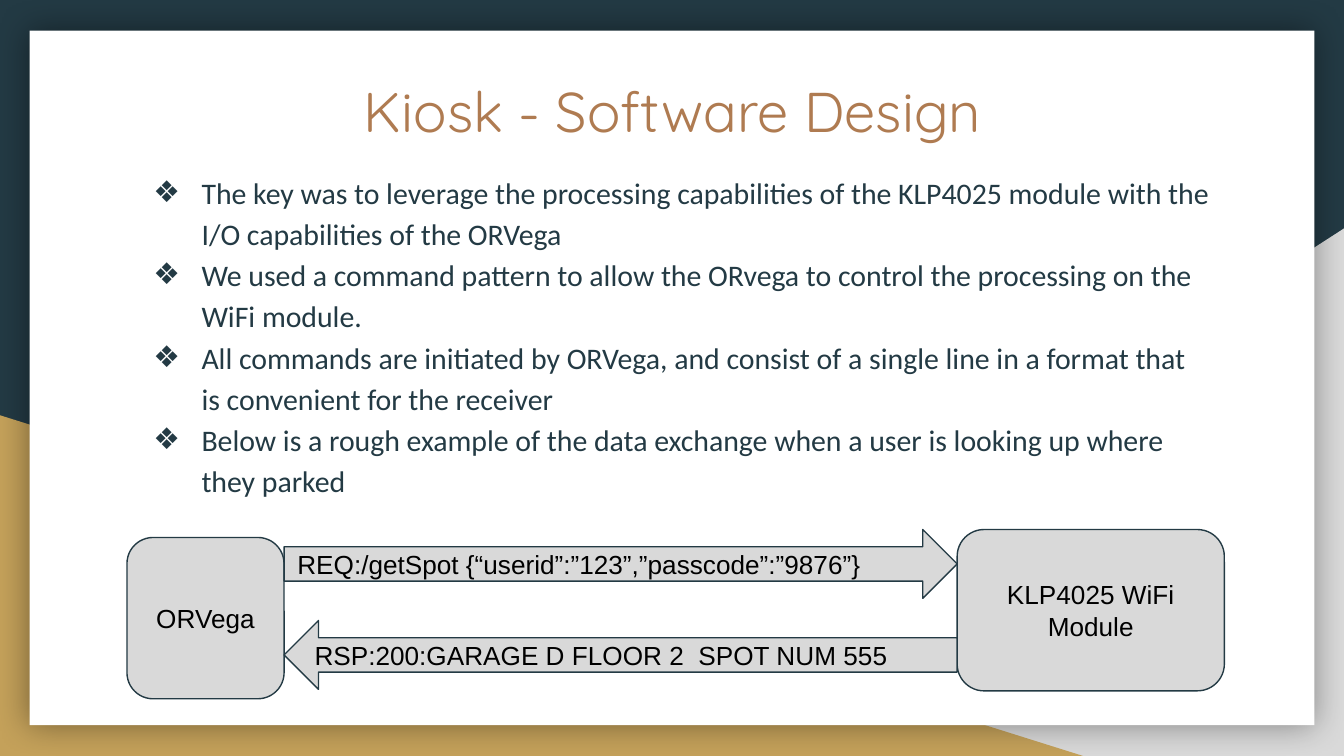
"""Builds the kiosk software design slide with its command exchange diagram."""
from dataclasses import dataclass
from typing import Optional

import pptx
import pptx.dml.color
import pptx.enum.shapes
import pptx.enum.text
import pptx.oxml
import pptx.oxml.ns
import pptx.util
from lxml import etree

Cm = pptx.util.Cm
Pt = pptx.util.Pt
RGBColor = pptx.dml.color.RGBColor
MSO_SHAPE = pptx.enum.shapes.MSO_SHAPE
PP_ALIGN = pptx.enum.text.PP_ALIGN
MSO_ANCHOR = pptx.enum.text.MSO_ANCHOR
qn = pptx.oxml.ns.qn

NAVY = RGBColor(0x23, 0x3A, 0x44)
GREY = RGBColor(0xD9, 0xD9, 0xD9)
GOLD = RGBColor(0xC4, 0xA1, 0x5A)
BROWN = RGBColor(0xAF, 0x7B, 0x51)
WHITE = RGBColor(0xFF, 0xFF, 0xFF)
BLACK = RGBColor(0x00, 0x00, 0x00)

BULLETS = [
    "The key was to leverage the processing capabilities of the KLP4025 module with the I/O capabilities of the ORVega",
    "We used a command pattern to allow the ORvega to control the processing on the WiFi module.",
    "All commands are initiated by ORVega, and consist of a single line in a format that is convenient for the receiver",
    "Below is a rough example of the data exchange when a user is looking up where they parked",
]


@dataclass
class Box:
    kind: MSO_SHAPE
    left: float
    top: float
    width: float
    height: float
    fill: RGBColor = GREY
    line: Optional[RGBColor] = None
    text: str = ""
    align: PP_ALIGN = PP_ALIGN.LEFT


ARROW_LEFT, ARROW_WIDTH, ARROW_HEIGHT = 5.37, 12.72, 1.3
NODE_HEIGHT = 3.05
PANEL = Box(MSO_SHAPE.RECTANGLE, 0.56, 0.58, 24.28, 13.13, WHITE)
GREY_CORNER = Box(MSO_SHAPE.RIGHT_TRIANGLE, 9.96, 4.32, 15.44, 9.97)
GOLD_CORNER = Box(MSO_SHAPE.RIGHT_TRIANGLE, 0, 7.85, 20.47, 6.44, GOLD)
DIAGRAM = [
    Box(MSO_SHAPE.ROUNDED_RECTANGLE, 2.4, 10.16, 2.97, NODE_HEIGHT, GREY, NAVY,
        "ORVega", PP_ALIGN.CENTER),
    Box(MSO_SHAPE.RIGHT_ARROW, ARROW_LEFT, 10.01, ARROW_WIDTH, ARROW_HEIGHT, GREY, NAVY,
        "REQ:/getSpot {“userid”:”123”,”passcode”:”9876”}"),
    Box(MSO_SHAPE.ROUNDED_RECTANGLE, ARROW_LEFT + ARROW_WIDTH, 10.01, 5.05, NODE_HEIGHT, GREY, NAVY,
        "KLP4025 WiFi Module", PP_ALIGN.CENTER),
    Box(MSO_SHAPE.LEFT_ARROW, ARROW_LEFT, 11.73, ARROW_WIDTH, ARROW_HEIGHT, GREY, NAVY,
        "RSP:200:GARAGE D FLOOR 2  SPOT NUM 555"),
]


def write(tf, lines: list[str], size: int, font: str, color: RGBColor, align: PP_ALIGN) -> None:
    tf.word_wrap = True
    tf.margin_left = tf.margin_right = tf.margin_top = tf.margin_bottom = Cm(0.25)
    tf.text = "\n".join(lines)
    for p in tf.paragraphs:
        p.alignment = align
        for r in p.runs:
            r.font.size = Pt(size)
            r.font.name = font
            r.font.color.rgb = color


def draw_box(s, box: Box):
    sp = s.shapes.add_shape(box.kind, Cm(box.left), Cm(box.top), Cm(box.width), Cm(box.height))
    sp.shadow.inherit = False
    sp.fill.solid()
    sp.fill.fore_color.rgb = box.fill
    if box.line is None:
        sp.line.fill.background()
    else:
        sp.line.color.rgb = box.line
        sp.line.width = Pt(0.75)
    if box.text:
        write(sp.text_frame, [box.text], 14, "Arial", BLACK, box.align)
        sp.text_frame.vertical_anchor = MSO_ANCHOR.MIDDLE
    return sp


def add_glow_shadow(sp) -> None:
    effects = sp._element.spPr.find(qn("a:effectLst"))
    shadow = etree.SubElement(effects, qn("a:outerShdw"), blurRad=str(Pt(18)), dist="0", dir="0",
                              algn="ctr", rotWithShape="0")
    color = etree.SubElement(shadow, qn("a:srgbClr"), val=str(BLACK))
    etree.SubElement(color, qn("a:alpha"), val="40000")


def add_bullet(p) -> None:
    pPr = p._p.get_or_add_pPr()
    pPr.set("marL", str(Cm(1.27)))
    pPr.set("indent", str(-Cm(0.91)))
    color = etree.SubElement(pPr, qn("a:buClr"))
    etree.SubElement(color, qn("a:srgbClr"), val=str(NAVY))
    etree.SubElement(pPr, qn("a:buFont"), typeface="Calibri")
    etree.SubElement(pPr, qn("a:buChar"), char="❖")


def add_text(s, top: float, height: float, lines: list[str], size: int, font: str,
             color: RGBColor, align: PP_ALIGN):
    tf = s.shapes.add_textbox(Cm(2.29), Cm(top), Cm(20.85), Cm(height)).text_frame
    write(tf, lines, size, font, color, align)
    return tf


def main() -> None:
    prs = pptx.Presentation()
    prs.slide_width, prs.slide_height = Cm(25.4), Cm(14.29)
    s = prs.slides.add_slide(prs.slide_layouts[6])
    s.background.fill.solid()
    s.background.fill.fore_color.rgb = NAVY

    corner = draw_box(s, GREY_CORNER)
    corner._element.spPr.find(qn("a:xfrm")).set("flipH", "1")
    draw_box(s, GOLD_CORNER)
    add_glow_shadow(draw_box(s, PANEL))

    add_text(s, 1.19, 2.64, ["Kiosk - Software Design"], 30, "Quicksand", BROWN, PP_ALIGN.CENTER)
    body = add_text(s, 2.95, 10.26, BULLETS, 16, "Calibri", NAVY, PP_ALIGN.LEFT)
    for p in body.paragraphs:
        p.line_spacing = 1.15
        add_bullet(p)
    body.paragraphs[-1].space_after = Pt(16)

    for box in DIAGRAM:
        draw_box(s, box)
    prs.save("out.pptx")


if __name__ == "__main__":
    main()
